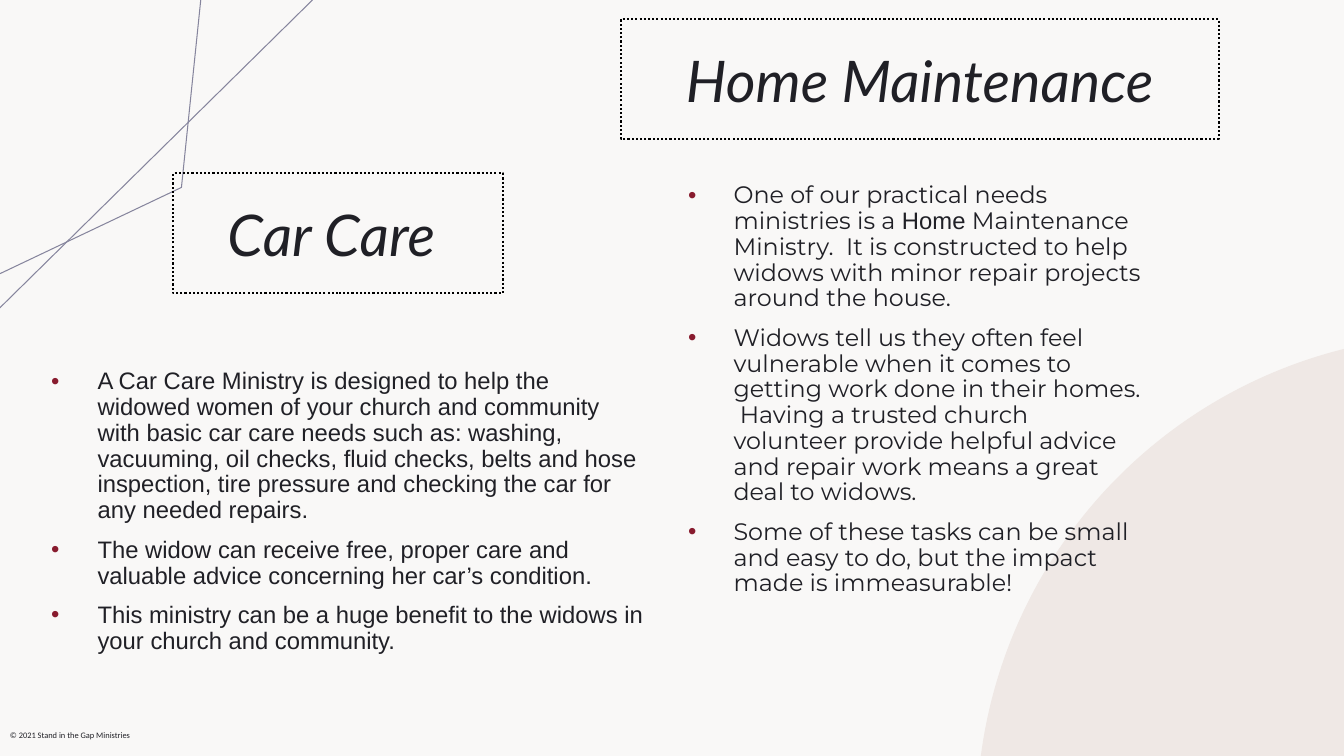
from dataclasses import dataclass

from lxml import etree
from pptx import Presentation
from pptx.dml.color import RGBColor
from pptx.enum.dml import MSO_LINE
from pptx.enum.shapes import MSO_SHAPE
from pptx.enum.text import MSO_ANCHOR, PP_ALIGN
from pptx.oxml.ns import qn
from pptx.util import Pt

RECTANGLE, ELLIPSE = MSO_SHAPE.RECTANGLE, MSO_SHAPE.OVAL
DOTTED = MSO_LINE.ROUND_DOT
TOP, MIDDLE = MSO_ANCHOR.TOP, MSO_ANCHOR.MIDDLE
CENTER = PP_ALIGN.CENTER


@dataclass(frozen=True)
class Theme:
    background: RGBColor = RGBColor(0xF9, 0xF8, 0xF7)
    circle: RGBColor = RGBColor(0xEF, 0xE8, 0xE5)
    strand: RGBColor = RGBColor(0x86, 0x85, 0x9D)
    border: RGBColor = RGBColor(0, 0, 0)
    text: RGBColor = RGBColor(0x20, 0x20, 0x26)
    bullet: str = "881B2E"
    title_font: str = "Lato"
    car_font: str = "Arial"
    home_font: str = "Montserrat"
    footer_font: str = "Calibri"
    title_size: float = 41
    body_size: float = 17
    footer_size: float = 6


THEME = Theme()

STRANDS = [
    [(-10.8, 230.4), (223.2, 0), (211.7, -77.8)],
    [(-85.7, 236.2), (129.6, 133.9), (146.2, -27.4)],
]

# Each item is a list of (text, font) runs.
CAR_ITEMS = [
    [(text, THEME.car_font)]
    for text in (
        "A Car Care Ministry is designed to help the widowed women of your church "
        "and community with basic car care needs such as: washing, vacuuming, oil "
        "checks, fluid checks, belts and hose inspection, tire pressure and "
        "checking the car for any needed repairs.",
        "The widow can receive free, proper care and valuable advice concerning "
        "her car’s condition.",
        "This ministry can be a huge benefit to the widows in your church and "
        "community.",
    )
]
HOME_ITEMS = [
    [
        ("One of our practical needs ministries is a ", THEME.home_font),
        ("Home", THEME.car_font),
        (" Maintenance Ministry.  It is constructed to help widows with minor "
         "repair projects around the house.", THEME.home_font),
    ],
    [("Widows tell us they often feel vulnerable when it comes to getting work "
      "done in their homes.  Having a trusted church volunteer provide helpful "
      "advice and repair work means a great deal to widows.", THEME.home_font)],
    [("Some of these tasks can be small and easy to do, but the impact made is "
      "immeasurable!", THEME.home_font)],
]


def apply_format(target, values):
    for name, value in values.items():
        setattr(target, name, value)


def set_frame(frame, anchor, vertical_inset):
    apply_format(frame, {
        "word_wrap": True, "vertical_anchor": anchor,
        "margin_left": Pt(7.2), "margin_right": Pt(7.2),
        "margin_top": Pt(vertical_inset), "margin_bottom": Pt(vertical_inset),
    })


def add_run(paragraph, text, font, size, italic=False):
    run = paragraph.add_run()
    run.text = text
    apply_format(run.font, {"name": font, "size": Pt(size), "italic": italic})
    run.font.color.rgb = THEME.text


def add_bullet(paragraph, indent, hanging):
    properties = paragraph._p.get_or_add_pPr()
    properties.set("marL", str(Pt(indent)))
    properties.set("indent", str(-Pt(hanging)))
    color = etree.SubElement(properties, qn("a:buClr"))
    etree.SubElement(color, qn("a:srgbClr"), val=THEME.bullet)
    etree.SubElement(properties, qn("a:buFont"), typeface="Arial")
    etree.SubElement(properties, qn("a:buChar"), char="•")


def add_backdrop(slide):
    slide.background.fill.solid()
    slide.background.fill.fore_color.rgb = THEME.background
    circle = slide.shapes.add_shape(ELLIPSE, Pt(697.7), Pt(239), Pt(692), Pt(692))
    circle.shadow.inherit = False
    circle.fill.solid()
    circle.fill.fore_color.rgb = THEME.circle
    circle.line.fill.background()
    for start, *rest in STRANDS:
        builder = slide.shapes.build_freeform(Pt(start[0]), Pt(start[1]))
        builder.add_line_segments([(Pt(x), Pt(y)) for x, y in rest], close=False)
        strand = builder.convert_to_shape()
        strand.shadow.inherit = False
        strand.fill.background()
        strand.line.color.rgb = THEME.strand
        strand.line.width = Pt(0.75)


def add_title(slide, box, text):
    shape = slide.shapes.add_shape(RECTANGLE, *map(Pt, box))
    shape.shadow.inherit = False
    shape.fill.background()
    shape.line.color.rgb = THEME.border
    apply_format(shape.line, {"width": Pt(1.5), "dash_style": DOTTED})
    set_frame(shape.text_frame, MIDDLE, 7.2)
    paragraph = shape.text_frame.paragraphs[0]
    paragraph.alignment = CENTER
    add_run(paragraph, text, THEME.title_font, THEME.title_size, italic=True)


def add_bullet_list(slide, box, items, anchor, vertical_inset, hanging):
    frame = slide.shapes.add_textbox(*map(Pt, box)).text_frame
    set_frame(frame, anchor, vertical_inset)
    for index, runs in enumerate(items):
        paragraph = frame.add_paragraph() if index else frame.paragraphs[0]
        add_bullet(paragraph, 48.2, hanging)
        apply_format(paragraph, {
            "line_spacing": 0.9, "space_before": Pt(10 if index else 0),
        })
        for text, font in runs:
            add_run(paragraph, text, font, THEME.body_size)


def add_footer(slide, box, text):
    frame = slide.shapes.add_textbox(*map(Pt, box)).text_frame
    set_frame(frame, MIDDLE, 3.6)
    add_run(frame.paragraphs[0], text, THEME.footer_font, THEME.footer_size)


def main():
    presentation = Presentation()
    presentation.slide_width, presentation.slide_height = Pt(960), Pt(540)
    slide = presentation.slides.add_slide(presentation.slide_layouts[6])
    add_backdrop(slide)
    add_title(slide, (123.8, 123.8, 235.4, 85.7), "Car Care ")
    add_bullet_list(slide, (14.4, 263.5, 454.3, 204.5), CAR_ITEMS, MIDDLE, 3.6, 33.1)
    add_footer(slide, (0, 517, 206.6, 16.6), "© 2021 Stand in the Gap Ministries")
    add_bullet_list(slide, (468.7, 123.8, 355.7, 261.4), HOME_ITEMS, TOP, 7.2, 32.4)
    add_title(slide, (443.5, 13.7, 427, 85.7), "Home Maintenance")
    presentation.save("out.pptx")


if __name__ == "__main__":
    main()
